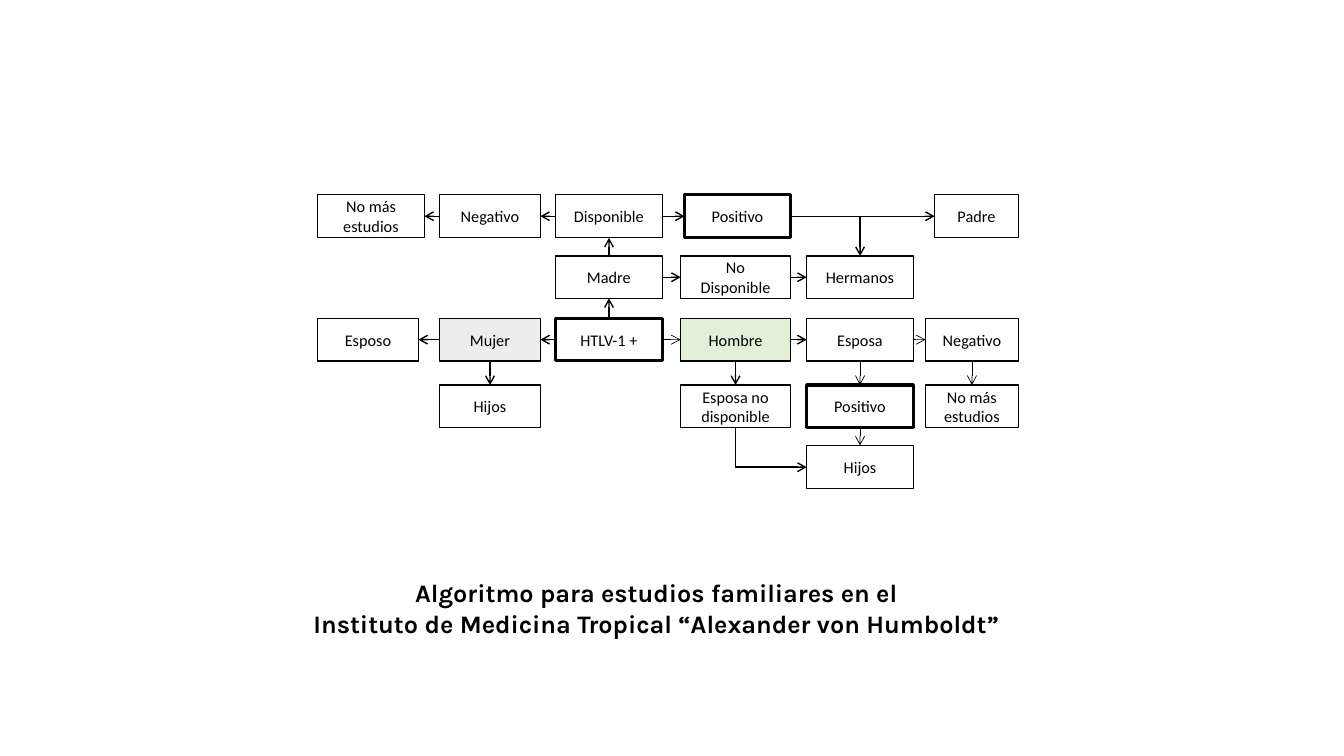
from dataclasses import dataclass
from typing import NamedTuple

from lxml import etree
from pptx import Presentation
from pptx import util as u
from pptx.dml.color import RGBColor
from pptx.enum import shapes, text
from pptx.oxml.ns import qn

BLACK = RGBColor(0x00, 0x00, 0x00)
WHITE = RGBColor(0xFF, 0xFF, 0xFF)
GREY = RGBColor(0xED, 0xED, 0xED)
GREEN = RGBColor(0xE2, 0xF0, 0xD9)

THIN, NORMAL, HEAVY = 0.5, 1, 2.25
TOP, LEFT, BOTTOM, RIGHT = range(4)


class Track(NamedTuple):
    start: float
    size: float


COLS = [Track(3.15, 1.06), Track(4.36, 1), Track(5.51, 1.06),
        Track(6.75, 1.09), Track(8, 1.06), Track(9.18, 0.92)]
ROWS = [Track(1.93, 0.43), Track(2.54, 0.42), Track(3.16, 0.42),
        Track(3.82, 0.42), Track(4.42, 0.43)]


@dataclass
class Box:
    label: str
    col: int
    row: int
    fill: RGBColor = WHITE
    weight: float = NORMAL
    trim_left: float = 0
    trim_right: float = 0


class Link(NamedTuple):
    start: tuple
    end: tuple
    weight: float = NORMAL


BOXES = [
    Box("No más estudios", 0, 0),
    Box("Negativo", 1, 0),
    Box("Disponible", 2, 0),
    Box("Positivo", 3, 0, weight=HEAVY, trim_left=0.04),
    Box("Padre", 5, 0, trim_left=0.09),
    Box("Madre", 2, 1),
    Box("No Disponible", 3, 1),
    Box("Hermanos", 4, 1),
    Box("Esposo", 0, 2, trim_right=0.06),
    Box("Mujer", 1, 2, fill=GREY),
    Box("HTLV-1 +", 2, 2, weight=HEAVY),
    Box("Hombre", 3, 2, fill=GREEN),
    Box("Esposa", 4, 2),
    Box("Negativo", 5, 2),
    Box("Hijos", 1, 3),
    Box("Esposa no disponible", 3, 3),
    Box("Positivo", 4, 3, weight=HEAVY),
    Box("No más estudios", 5, 3),
    Box("Hijos", 4, 4),
]

LINKS = [
    Link((2, 2), (1, 2)), Link((1, 2), (0, 2)), Link((1, 2), (1, 3)),
    Link((2, 2), (2, 1)), Link((2, 1), (2, 0)), Link((2, 1), (3, 1)),
    Link((3, 1), (4, 1)), Link((2, 0), (1, 0)), Link((1, 0), (0, 0)),
    Link((2, 0), (3, 0)), Link((3, 0), (5, 0)),
    Link((2, 2), (3, 2), THIN), Link((3, 2), (4, 2)), Link((3, 2), (3, 3)),
    Link((4, 2), (5, 2), THIN), Link((4, 2), (4, 3), THIN),
    Link((5, 2), (5, 3), THIN), Link((4, 3), (4, 4), THIN),
]


def write(tf, content: str, *, font: str, size: float, bold: bool = False) -> None:
    tf.word_wrap = True
    tf.text = content
    for p in tf.paragraphs:
        p.alignment = text.PP_ALIGN.CENTER
        for r in p.runs:
            r.font.name, r.font.size, r.font.bold = font, u.Pt(size), bold
            r.font.color.rgb = BLACK


def add_box(slide, box: Box):
    col, row = COLS[box.col], ROWS[box.row]
    sp = slide.shapes.add_shape(
        shapes.MSO_SHAPE.RECTANGLE,
        u.Inches(col.start + box.trim_left), u.Inches(row.start),
        u.Inches(col.size - box.trim_left - box.trim_right), u.Inches(row.size))
    sp.shadow.inherit = False
    sp.fill.solid()
    sp.fill.fore_color.rgb = box.fill
    sp.line.color.rgb = BLACK
    sp.line.width = u.Pt(box.weight)
    sp.text_frame.vertical_anchor = text.MSO_ANCHOR.MIDDLE
    write(sp.text_frame, box.label, font="Calibri", size=11.6)
    return sp


def add_arrow(slide, weight: float = NORMAL, kind=shapes.MSO_CONNECTOR.STRAIGHT,
              start: tuple = (0, 0)):
    cx = slide.shapes.add_connector(kind, *start, *start)
    cx.line.color.rgb = BLACK
    cx.line.width = u.Pt(weight)
    ln = cx.line._get_or_add_ln()
    etree.SubElement(ln, qn("a:tailEnd"), type="arrow")
    etree.SubElement(cx._element.spPr, qn("a:effectLst"))
    return cx


def add_link(slide, nodes: dict, link: Link) -> None:
    (c1, r1), (c2, r2) = link.start, link.end
    if r1 == r2:
        sides = (RIGHT, LEFT) if c2 > c1 else (LEFT, RIGHT)
    else:
        sides = (BOTTOM, TOP) if r2 > r1 else (TOP, BOTTOM)
    cx = add_arrow(slide, link.weight)
    cx.begin_connect(nodes[link.start], sides[0])
    cx.end_connect(nodes[link.end], sides[1])


def add_branch(slide, source, target) -> None:
    middle = target.left + target.width // 2
    cx = add_arrow(slide, start=(middle, source.top + source.height // 2))
    cx.end_connect(target, TOP)


def add_elbow(slide, source, target) -> None:
    cx = add_arrow(slide, kind=shapes.MSO_CONNECTOR.ELBOW)
    cx.begin_connect(source, BOTTOM)
    cx.end_connect(target, LEFT)
    left, top, across, down = cx.left, cx.top, cx.width, cx.height
    cx.left, cx.top = left + (across - down) // 2, top + (down - across) // 2
    cx.width, cx.height = down, across
    spPr = cx._element.spPr
    spPr.find(qn("a:xfrm")).set("rot", "16200000")
    spPr.find(qn("a:xfrm")).set("flipH", "1")
    spPr.find(qn("a:prstGeom")).set("prst", "bentConnector2")


def add_title(slide) -> None:
    sp = slide.shapes.title
    sp.left, sp.top = u.Inches(2.19), u.Inches(5.68)
    sp.width, sp.height = u.Inches(8.64), u.Inches(0.71)
    tf = sp.text_frame
    tf.vertical_anchor = text.MSO_ANCHOR.TOP
    tf.auto_size = text.MSO_AUTO_SIZE.NONE
    write(tf, "Algoritmo para estudios familiares en el\n"
              "Instituto de Medicina Tropical “Alexander von Humboldt”",
          font="Karla", size=18, bold=True)


def main() -> None:
    prs = Presentation()
    prs.slide_width, prs.slide_height = u.Inches(13.33), u.Inches(7.5)
    slide = prs.slides.add_slide(prs.slide_layouts[5])
    nodes = {(box.col, box.row): add_box(slide, box) for box in BOXES}
    for link in LINKS:
        add_link(slide, nodes, link)
    add_branch(slide, nodes[3, 0], nodes[4, 1])
    add_elbow(slide, nodes[3, 3], nodes[4, 4])
    add_title(slide)
    prs.save("out.pptx")


if __name__ == "__main__":
    main()
